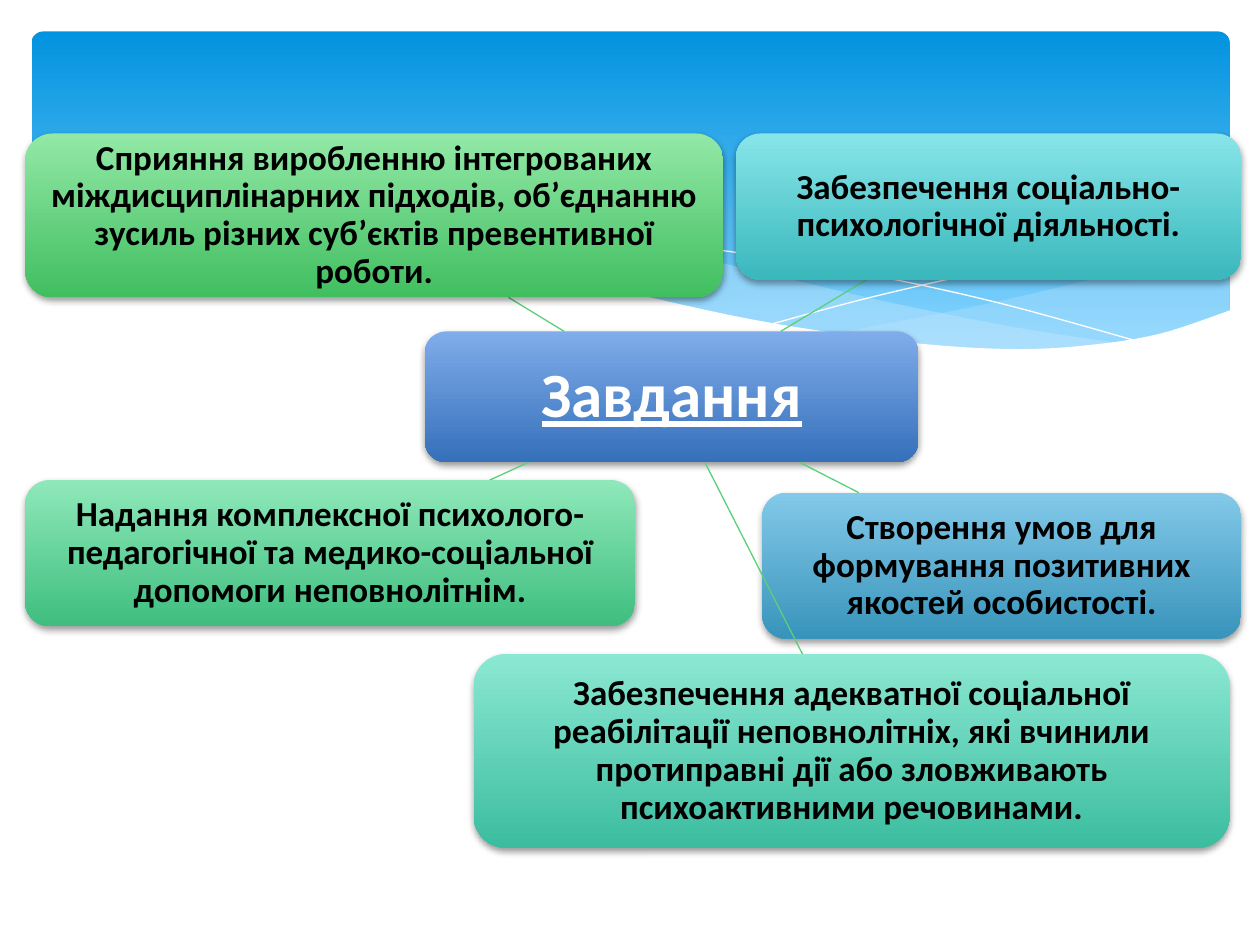
from lxml import etree
from pptx import Presentation
from pptx.dml.color import RGBColor
from pptx.enum.shapes import MSO_CONNECTOR, MSO_SHAPE
from pptx.enum.text import MSO_ANCHOR, MSO_AUTO_SIZE, PP_ALIGN
from pptx.oxml.ns import qn
from pptx.util import Inches, Pt

ROUND_BOX = MSO_SHAPE.ROUNDED_RECTANGLE
STRAIGHT = MSO_CONNECTOR.STRAIGHT
CENTER = PP_ALIGN.CENTER
MIDDLE = MSO_ANCHOR.MIDDLE
NO_AUTOFIT = MSO_AUTO_SIZE.NONE

WHITE = RGBColor(0xFF, 0xFF, 0xFF)
BLACK = RGBColor(0x00, 0x00, 0x00)
SPOKE_GREEN = RGBColor(0x5B, 0xD0, 0x78)
WAVE_BLUE = RGBColor(0xC6, 0xE7, 0xFC)
BANNER = (RGBColor(0x02, 0x93, 0xE0), RGBColor(0x83, 0xD3, 0xFE))
BLUE = (RGBColor(0x80, 0xAC, 0xEA), RGBColor(0x35, 0x70, 0xBA))
SKY = (RGBColor(0x83, 0xC9, 0xE9), RGBColor(0x38, 0x94, 0xBB))
CYAN = (RGBColor(0x87, 0xE5, 0xE9), RGBColor(0x3A, 0xB8, 0xBC))
TEAL = (RGBColor(0x8B, 0xE8, 0xD2), RGBColor(0x3C, 0xBD, 0xA0))
MINT = (RGBColor(0x8F, 0xE8, 0xBA), RGBColor(0x3F, 0xBE, 0x7F))
GREEN = (RGBColor(0x92, 0xE8, 0xA6), RGBColor(0x41, 0xBF, 0x60))

# The grid: all places are (column, row, columns, rows)
COLUMNS, ROWS = 100, 75
HUB = (33.7, 26.3, 39.2, 10.4)

# Tasks around the hub, from back to front
TASKS = [
    ((60.5, 39.1, 38, 11.6), SKY,
     "Створення умов для формування позитивних якостей особистості."),
    ((58.4, 10.6, 40.1, 11.6), CYAN,
     "Забезпечення соціально-психологічної діяльності."),
    ((37.6, 51.9, 60, 15.4), TEAL,
     "Забезпечення адекватної соціальної реабілітації неповнолітніх, які "
     "вчинили протиправні дії або зловживають психоактивними речовинами."),
    ((2, 38.1, 48.4, 11.6), MINT,
     "Надання комплексної психолого-педагогічної та медико-соціальної "
     "допомоги неповнолітнім."),
    ((2, 10.6, 55.4, 13), GREEN,
     "Сприяння виробленню інтегрованих міждисциплінарних підходів, "
     "об’єднанню зусиль різних суб’єктів превентивної роботи."),
]

# Wave edges, as points of smooth curves
RIGHT_WAVE_TOP = [(97.6, 19.9), (92.1, 20.9), (86.1, 22.3), (77.9, 24.2), (66.1, 26.5)]
RIGHT_WAVE_BASE = [(66.1, 26.5), (73.2, 27.4), (80.3, 27.8), (87.2, 27.4),
                   (92.8, 26.3), (97.6, 24.7)]
LONG_WAVE_TOP = [(89.3, 27.3), (80.7, 26), (70.6, 24), (62.9, 22.2), (55.5, 20.5),
                 (48.9, 19.4), (42, 18.7), (36.1, 18.6), (28.6, 19.1)]
LONG_WAVE_BASE = [(28.6, 19.1), (36.2, 20.3), (44.9, 22.2), (56.6, 24.8), (66.5, 26.6),
                  (74.8, 27.6), (81.8, 27.8), (89.3, 27.3)]
LONG_CREST = [(30.9, 19.5), (35.3, 18.9), (41.6, 18.7), (48.9, 19), (58.2, 20),
              (69.5, 21.9), (79.5, 24.1), (90.7, 27.2)]
RIGHT_CREST = [(61.3, 25.7), (69.5, 23.5), (80.6, 21), (88.1, 19.6), (97.5, 18.5)]
PAPER_EDGE = [(97.7, 24.6), (92, 26.5), (86.3, 27.4), (80.9, 27.7), (74.4, 27.4),
              (66.8, 26.5), (57.9, 25), (44.7, 22), (36.5, 20.2), (29.2, 19.1),
              (23, 18.5), (17.7, 18.4), (13.2, 18.6), (9.5, 19.1), (5.9, 19.9),
              (2.3, 21.3)]


def smooth(points, steps=6):
    """Points of a Catmull-Rom curve that runs through the given ones."""
    padded = [points[0], *points, points[-1]]
    curve = [points[0]]
    for a, b, c, d in zip(padded, padded[1:], padded[2:], padded[3:]):
        for t in (step / steps for step in range(1, steps + 1)):
            curve.append(tuple(
                (2 * q + (r - p) * t + (2 * p - 5 * q + 4 * r - s) * t ** 2
                 + (3 * q - p - 3 * r + s) * t ** 3) / 2
                for p, q, r, s in zip(a, b, c, d)))
    return curve


def write_text(frame, text, *, size=20, color=BLACK, underline=False, margin=0.06):
    frame.word_wrap = True
    frame.auto_size = NO_AUTOFIT
    frame.vertical_anchor = MIDDLE
    frame.margin_left = frame.margin_right = Inches(margin)
    frame.margin_top = frame.margin_bottom = Inches(margin)
    paragraph = frame.paragraphs[0]
    paragraph.alignment, paragraph.line_spacing = CENTER, 0.9
    run = paragraph.add_run()
    run.text = text
    font = run.font
    font.name, font.size, font.bold, font.underline = "Calibri", Pt(size), True, underline
    font.color.rgb = color


class TaskSlide:
    def __init__(self, deck):
        self.slide = deck.slides.add_slide(deck.slide_layouts[5])
        self.shapes = self.slide.shapes
        self.column = deck.slide_width / COLUMNS
        self.row = deck.slide_height / ROWS

    def place(self, *lengths):
        """Turn alternating columns and rows into slide lengths."""
        return [round(length * (self.row if index % 2 else self.column))
                for index, length in enumerate(lengths)]

    def box(self, area, colors, end=1, corner=None, shadow=True):
        box = self.shapes.add_shape(ROUND_BOX, *self.place(*area))
        if corner is not None:
            box.adjustments[0] = corner
        box.fill.gradient()
        box.fill.gradient_angle = 270
        for stop, color, position in zip(box.fill.gradient_stops, colors, (0, end)):
            stop.color.rgb, stop.position = color, position
        box.line.fill.background()
        box.shadow.inherit = False
        if shadow:
            effects = box.element.spPr.find(qn("a:effectLst"))
            outer = etree.SubElement(effects, qn("a:outerShdw"), blurRad=str(Pt(4)),
                                     dist=str(Pt(2)), dir="5400000", rotWithShape="0")
            black = etree.SubElement(outer, qn("a:srgbClr"), val="000000")
            etree.SubElement(black, qn("a:alpha"), val="38000")

    def label(self, area, text):
        write_text(self.shapes.add_textbox(*self.place(*area)).text_frame, text)

    def title(self, area, text):
        title = self.shapes.title
        title.left, title.top, title.width, title.height = self.place(*area)
        write_text(title.text_frame, text, size=36, color=WHITE, underline=True, margin=0.1)
        self.shapes.element.append(title.element)  # bring to the front

    def outline(self, points, closed):
        start, *rest = [self.place(*point) for point in points]
        builder = self.shapes.build_freeform(*start)
        builder.add_line_segments(rest, close=closed)
        outline = builder.convert_to_shape()
        outline.shadow.inherit = False
        return outline

    def wave(self, points, color, opacity=100):
        wave = self.outline(points, True)
        wave.line.fill.background()
        wave.fill.solid()
        wave.fill.fore_color.rgb = color
        if opacity < 100:
            tint = wave.element.spPr.find(".//" + qn("a:srgbClr"))
            etree.SubElement(tint, qn("a:alpha"), val=str(opacity * 1000))

    def crest(self, points):
        crest = self.outline(smooth(points), False)
        crest.fill.background()
        crest.line.color.rgb, crest.line.width = WHITE, Pt(0)

    def spoke(self, hub, task):
        """Join the two centres, showing only the part between the boxes."""
        (hub_x, hub_y), (task_x, task_y) = [
            (left + width / 2, top + height / 2) for left, top, width, height in (hub, task)]
        below = task_y > hub_y
        edges = (hub[1] + hub[3], task[1]) if below else (hub[1], task[1] + task[3])
        slope = (task_x - hub_x) / (task_y - hub_y)
        ends = [(hub_x + (edge - hub_y) * slope, edge) for edge in edges]
        spoke = self.shapes.add_connector(STRAIGHT, *self.place(*ends[0], *ends[1]))
        spoke.line.color.rgb, spoke.line.width = SPOKE_GREEN, Pt(0.75)
        etree.SubElement(spoke.element.spPr, qn("a:effectLst"))


def main():
    deck = Presentation()
    deck.slide_width, deck.slide_height = Inches(10), Inches(7.5)
    page = TaskSlide(deck)

    # Banner with waves
    page.box((2.5, 2.5, 95.1, 27), BANNER, end=0.9, corner=0.034, shadow=False)
    page.wave(smooth(RIGHT_WAVE_TOP) + smooth(RIGHT_WAVE_BASE), WAVE_BLUE, opacity=29)
    page.wave(smooth(LONG_WAVE_TOP) + smooth(LONG_WAVE_BASE), WAVE_BLUE, opacity=40)
    page.crest(LONG_CREST)
    page.crest(RIGHT_CREST)
    page.wave(smooth(PAPER_EDGE) + [(2.3, 32.9), (97.7, 32.9)], WHITE)

    # Hub
    page.box(HUB, BLUE)
    page.title(HUB, "Завдання")

    # Tasks
    for area, colors, text in TASKS:
        page.spoke(HUB, area)
        page.box(area, colors)
        page.label(area, text)

    deck.save("out.pptx")


if __name__ == "__main__":
    main()
